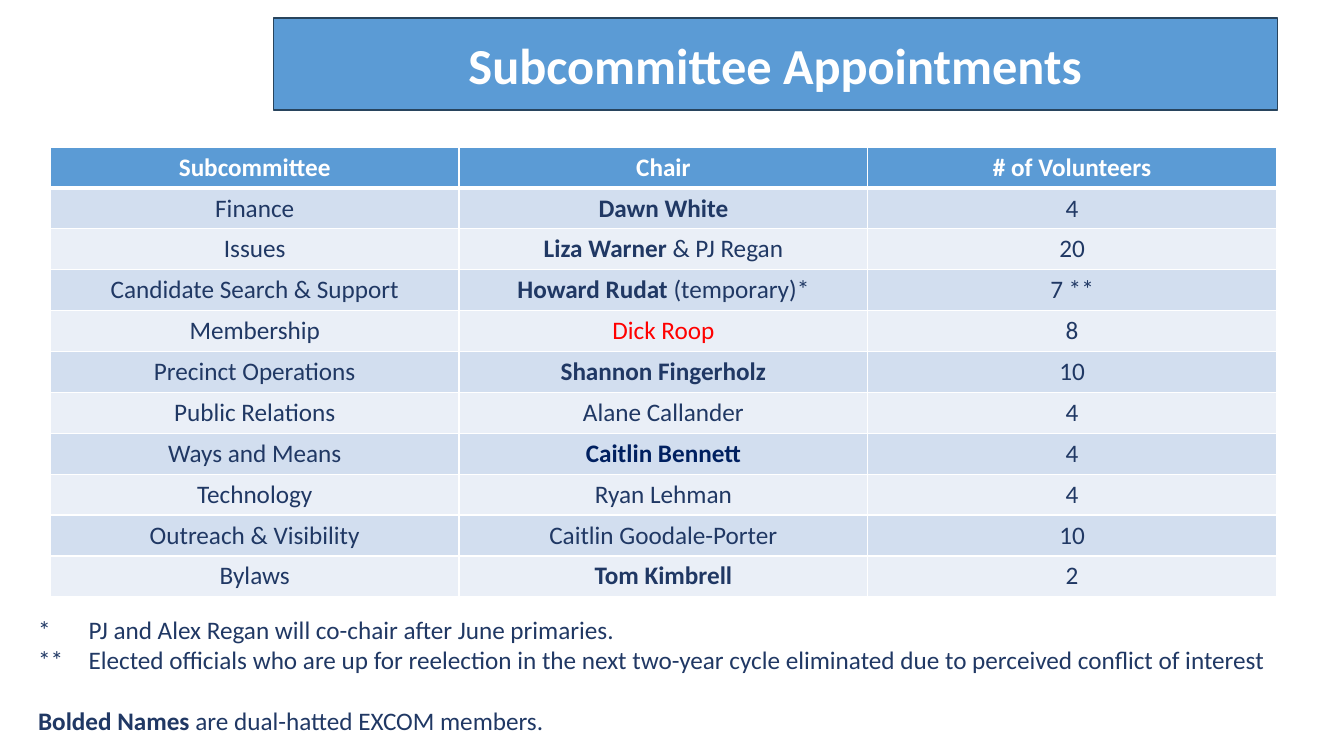
from dataclasses import dataclass

from lxml.etree import SubElement
from pptx import Presentation
from pptx.dml.color import RGBColor
from pptx.enum.text import MSO_ANCHOR, MSO_AUTO_SIZE, PP_ALIGN
from pptx.oxml.ns import qn
from pptx.util import Inches, Pt

COLORS = {
    "blue": "5B9BD5",
    "outline": "28445D",
    "white": "FFFFFF",
    "text": "203864",
    "navy": "002060",
    "red": "FF0000",
    "dark band": "D2DEEF",
    "light band": "EAEFF7",
}
FONT = "Calibri"


@dataclass(frozen=True)
class Span:
    text: str
    bold: bool = False


@dataclass(frozen=True)
class Subcommittee:
    name: str
    chair: tuple[Span, ...]
    volunteers: str
    chair_color: str = "text"


SUBCOMMITTEES = [
    Subcommittee("Finance", (Span("Dawn White", True),), "4"),
    Subcommittee("Issues", (Span("Liza Warner ", True), Span("& PJ Regan")), "20"),
    Subcommittee(
        "Candidate Search & Support",
        (Span("Howard Rudat ", True), Span("(temporary)*")),
        "7 **",
    ),
    Subcommittee("Membership", (Span("Dick Roop"),), "8", "red"),
    Subcommittee("Precinct Operations", (Span("Shannon Fingerholz", True),), "10"),
    Subcommittee("Public Relations", (Span("Alane Callander"),), "4"),
    Subcommittee("Ways and Means", (Span("Caitlin Bennett", True),), "4", "navy"),
    Subcommittee("Technology", (Span("Ryan Lehman"),), "4"),
    Subcommittee("Outreach & Visibility", (Span("Caitlin Goodale-Porter"),), "10"),
    Subcommittee("Bylaws", (Span("Tom Kimbrell", True),), "2"),
]
HEADINGS = ("Subcommittee", "Chair", "# of Volunteers")
FOOTNOTES = [
    (Span("*\tPJ and Alex Regan will co-chair after June primaries."),),
    (
        Span(
            "**\tElected officials who are up for reelection in the next two-year "
            "cycle eliminated due to perceived conflict of interest"
        ),
    ),
    (Span("Bolded Names ", True), Span("are dual-hatted EXCOM members.")),
]


def rgb(color: str) -> RGBColor:
    return RGBColor.from_string(COLORS[color])


def write(para, spans: tuple[Span, ...], color: str, size: int = 18) -> None:
    para.font.name = FONT
    para.font.size = Pt(size)
    para.font.color.rgb = rgb(color)
    same_weight = len({span.bold for span in spans}) == 1
    if same_weight:
        para.font.bold = spans[0].bold
    for span in spans:
        run = para.add_run()
        run.text = span.text
        if not same_weight:
            run.font.bold = span.bold


def add_borders(cell, top: int, bottom: int) -> None:
    properties = cell._tc.get_or_add_tcPr()
    for side, width in (("L", 1), ("R", 1), ("T", top), ("B", bottom)):
        line = SubElement(properties, qn(f"a:ln{side}"), w=str(Pt(width)))
        fill = SubElement(line, qn("a:solidFill"))
        SubElement(fill, qn("a:srgbClr"), val=COLORS["white"])


def add_title(page) -> None:
    title = page.shapes.title
    title.left, title.top = Inches(2.71), Inches(0.18)
    title.width, title.height = Inches(9.96), Inches(0.91)
    title.fill.solid()
    title.fill.fore_color.rgb = rgb("blue")
    title.line.color.rgb = rgb("outline")
    title.line.width = Pt(1)
    frame = title.text_frame
    frame.auto_size = MSO_AUTO_SIZE.NONE
    frame.vertical_anchor = MSO_ANCHOR.MIDDLE
    para = frame.paragraphs[0]
    para.alignment = PP_ALIGN.CENTER
    write(para, (Span("Subcommittee Appointments", True),), "white", 36)


def add_subcommittee_table(page) -> None:
    rows = [[((Span(heading, True),), "white") for heading in HEADINGS]]
    for entry in SUBCOMMITTEES:
        rows.append(
            [
                ((Span(entry.name),), "text"),
                (entry.chair, entry.chair_color),
                ((Span(entry.volunteers),), "text"),
            ]
        )
    table = page.shapes.add_table(
        len(rows), len(HEADINGS), Inches(0.5), Inches(1.46), Inches(12.16), Inches(4.46)
    ).table
    for row_index, row in enumerate(rows):
        band = "dark band" if row_index % 2 else "light band"
        for column_index, (spans, color) in enumerate(row):
            cell = table.cell(row_index, column_index)
            add_borders(
                cell,
                top=3 if row_index == 1 else 1,
                bottom=3 if row_index == 0 else 1,
            )
            cell.fill.solid()
            cell.fill.fore_color.rgb = rgb(band if row_index else "blue")
            para = cell.text_frame.paragraphs[0]
            para.alignment = PP_ALIGN.CENTER
            write(para, spans, color)


def add_footnotes(page) -> None:
    box = page.shapes.add_textbox(
        Inches(0.28), Inches(6.04), Inches(12.96), Inches(1.62)
    )
    frame = box.text_frame
    frame.word_wrap = False
    for index, spans in enumerate(FOOTNOTES):
        para = frame.add_paragraph() if index else frame.paragraphs[0]
        write(para, spans, "text")
    frame.paragraphs[-1].space_before = Pt(22)


def main() -> None:
    deck = Presentation()
    deck.slide_width, deck.slide_height = Inches(13.33), Inches(7.5)
    page = deck.slides.add_slide(deck.slide_layouts[5])
    add_title(page)
    add_subcommittee_table(page)
    add_footnotes(page)
    deck.save("out.pptx")


if __name__ == "__main__":
    main()
